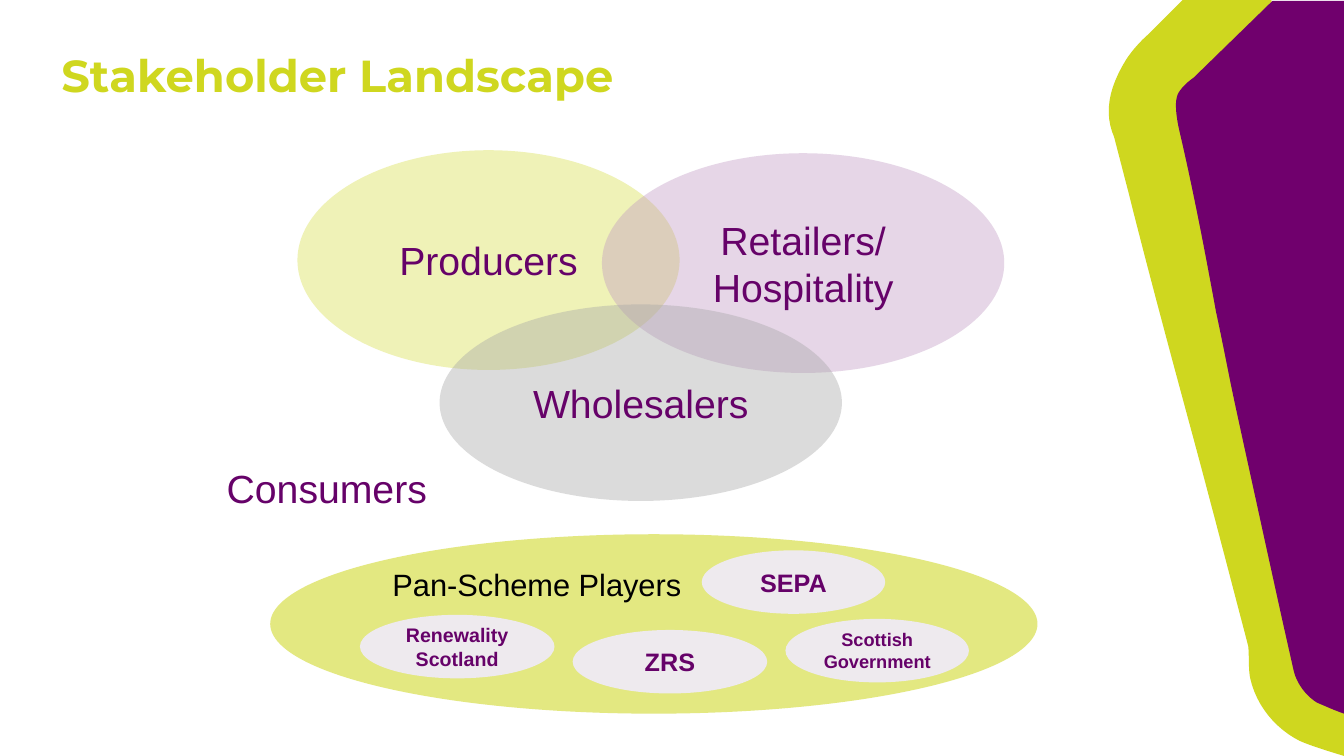
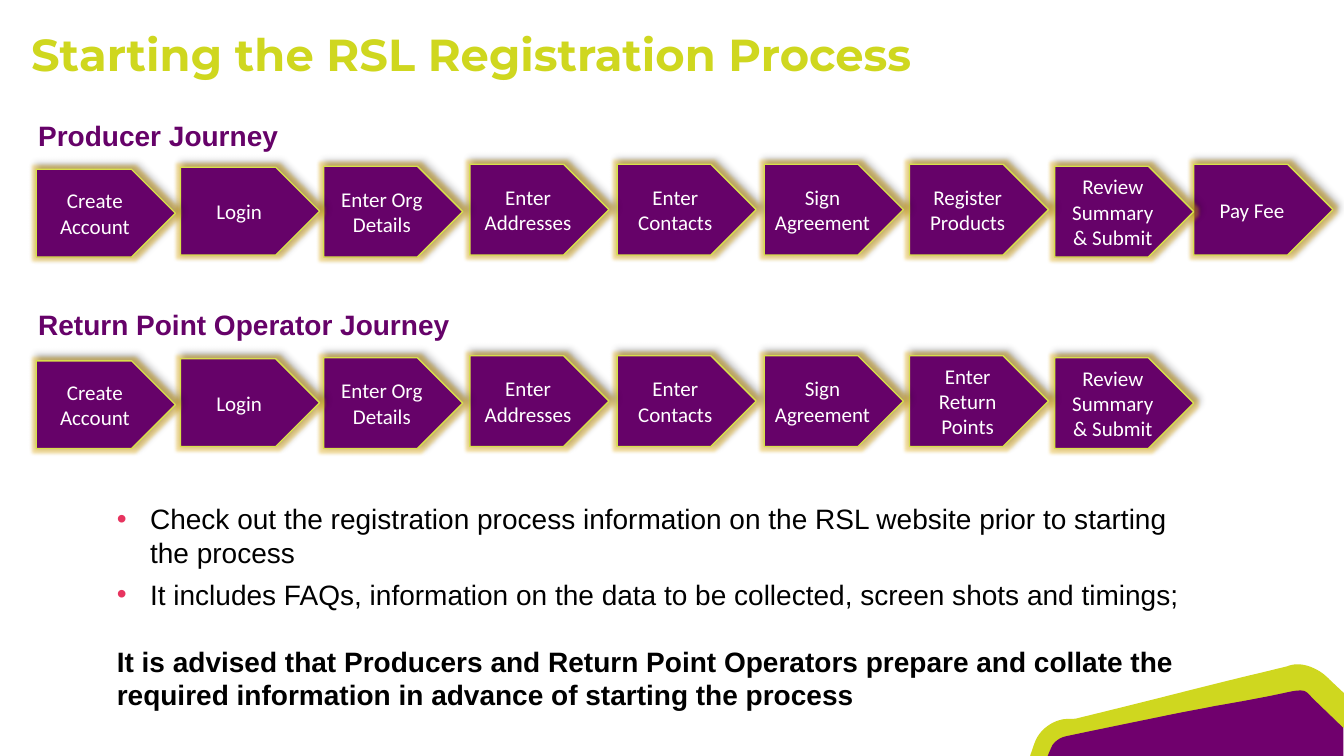
from dataclasses import dataclass
from typing import Callable, NamedTuple

from lxml.etree import SubElement
from pptx import Presentation
from pptx.dml.color import RGBColor
from pptx.enum.shapes import MSO_SHAPE
from pptx.enum.text import MSO_ANCHOR, PP_ALIGN
from pptx.oxml.ns import qn
from pptx.util import Inches, Pt

LIME, PURPLE, PLUM = "CFD71F", "70006D", "660269"
BLACK, WHITE, PALE, EDGE = "000000", "FFFFFF", "EEEAEE", "D8DF4B"
PINK, GOLD = "E7345F", "E8B010"
PAGE_WIDTH, PAGE_HEIGHT = 13.33, 7.5

# Corner art, laid out for the right side of a page. Each outline starts at
# a point; two further numbers make a line, six make a curve.
LIME_BAND = [
    (12.61, 0), (11.73, 0), (11.39, 0.34),
    (11.31, 0.41, 11.23, 0.5, 11.17, 0.59),
    (10.99, 0.88, 10.95, 1.13, 11.05, 1.36), (11.19, 1.9),
    (11.34, 2.5, 11.56, 3.33, 11.78, 4.14),
    (12, 4.95, 12.22, 5.8, 12.38, 6.41),
    (12.39, 6.5, 12.38, 6.64, 12.4, 6.73),
    (12.46, 7, 12.65, 7.23, 12.89, 7.35),
    (13, 7.4, 13.2, 7.46, 13.33, 7.5), (13.33, 7.08),
]
PURPLE_PANEL = [
    (12.62, 0.01), (11.84, 0.77),
    (11.77, 0.82, 11.72, 0.87, 11.69, 0.92),
    (11.64, 1, 11.67, 1.18, 11.7, 1.31),
    (11.82, 1.82, 11.94, 2.43, 12.06, 3.09),
    (12.13, 3.41, 12.19, 3.74, 12.26, 4.06),
    (12.43, 4.84, 12.59, 5.57, 12.72, 6.16), (12.83, 6.65),
    (12.86, 6.78, 12.95, 6.9, 13.06, 6.97),
    (13.13, 7, 13.24, 7.05, 13.33, 7.08), (13.33, 0.01),
]

Point = tuple[float, float]


class Box(NamedTuple):
    left: float
    top: float
    width: float
    height: float

    def lengths(self) -> list[int]:
        return [Inches(value) for value in self]


@dataclass
class Style:
    size: float
    color: str = PLUM
    name: str = "Arial"
    bold: bool = False


@dataclass
class Oval:
    text: str
    box: Box
    fill: str
    style: Style
    opacity: int = 100
    centred: bool = True


class Step(NamedTuple):
    text: str
    left: float
    drop: float
    height: float = 0.9


@dataclass
class Note:
    text: str
    style: Style
    bullet: bool = False
    before: float = 0
    after: float = 6


TITLE = Style(32, LIME, "Montserrat", True)
GROUP, HEADING = Style(28), Style(20, bold=True)
STEP_TEXT = Style(15, WHITE, "Calibri")

OVALS = [
    Oval("Producers", Box(2.95, 1.49, 3.79, 2.18), EDGE, GROUP, 40),
    Oval("Retailers/\vHospitality", Box(5.97, 1.52, 3.99, 2.18), "C199C3", GROUP, 40),
    Oval("Wholesalers", Box(4.36, 3.02, 3.99, 1.95), "A6A6A6", GROUP, 40),
    Oval("Pan-Scheme Players", Box(2.68, 5.3, 7.61, 1.78), "DDE362",
         Style(22, BLACK), 80, False),
    Oval("Renewality Scotland", Box(3.57, 6.1, 1.93, 0.63), PALE, Style(14, bold=True)),
    Oval("SEPA", Box(6.96, 5.46, 1.82, 0.63), PALE, Style(18, bold=True)),
    Oval("ZRS", Box(5.68, 6.25, 1.93, 0.63), PALE, Style(18, bold=True)),
    Oval("Scottish Government", Box(7.79, 6.14, 1.82, 0.63), PALE, Style(13, bold=True)),
]

PRODUCER_STEPS = [
    Step("Create Account", 0.36, 0.05, 0.87),
    Step("Login", 1.79, 0.03, 0.87),
    Step("Enter Org Details", 3.21, 0.02),
    Step("Enter Addresses", 4.66, 0),
    Step("Enter Contacts", 6.12, 0),
    Step("Sign Agreement", 7.58, 0),
    Step("Register Products", 9.02, 0),
    Step("Review Summary & Submit", 10.46, 0.02),
    Step("Pay Fee", 11.84, 0),
]
OPERATOR_STEPS = [
    step._replace(text="Enter Return\nPoints") if step.text == "Register Products" else step
    for step in PRODUCER_STEPS[:-1]
]

NOTES = [
    Note("Check out the registration process information on the RSL website prior "
         "to starting the process", Style(20, BLACK), True),
    Note("It includes FAQs, information on the data to be collected, screen shots "
         "and timings;", Style(20, BLACK), True),
    Note("It is advised that Producers and Return Point Operators prepare and collate "
         "the required information in advance of starting the process",
         Style(20, BLACK, bold=True), before=17.5, after=12),
]


# Colour and text helpers
def paint(target, color: str, opacity: int = 100) -> None:
    """Colour a fill, or a font's or line's fill, from a hex string."""
    target.solid()
    target.fore_color.rgb = RGBColor.from_string(color)
    if opacity < 100:
        hue = target._xPr.find(qn("a:solidFill"))[0]
        SubElement(hue, qn("a:alpha"), val=str(opacity * 1000))


def style_para(para, style: Style) -> None:
    values = {"name": style.name, "size": Pt(style.size), "bold": style.bold}
    for span in para.runs:
        for key, value in values.items():
            setattr(span.font, key, value)
        paint(span.font.fill, style.color)


def write(frame, text: str, style: Style, align=PP_ALIGN.LEFT,
          anchor=MSO_ANCHOR.TOP) -> None:
    for key, value in {"word_wrap": True, "vertical_anchor": anchor}.items():
        setattr(frame, key, value)
    for index, line in enumerate(text.split("\n")):
        para = frame.add_paragraph() if index else frame.paragraphs[0]
        para.text = line
        para.alignment = align
        style_para(para, style)


def add_label(page, text: str, box: Box, style: Style) -> None:
    write(page.shapes.add_textbox(*box.lengths()).text_frame, text, style)


# Corner art
def trace(outline: list[tuple], pieces: int = 12) -> list[Point]:
    """Turn lines and cubic curves into a chain of points."""
    points = [outline[0]]
    for part in outline[1:]:
        if len(part) == 2:
            points.append(part)
            continue
        knots = [points[-1], part[:2], part[2:4], part[4:]]
        for index in range(1, pieces + 1):
            t = index / pieces
            weights = ((1 - t) ** 3, 3 * t * (1 - t) ** 2, 3 * t * t * (1 - t), t ** 3)
            points.append(tuple(
                sum(weight * knot[axis] for weight, knot in zip(weights, knots))
                for axis in (0, 1)))
    return points


def side(point: Point) -> Point:
    return point


def bottom(point: Point) -> Point:
    """Turn the side art into the small art at the bottom right."""
    x, y = point
    return PAGE_WIDTH - 0.415 * y, PAGE_HEIGHT - 0.39 * (PAGE_WIDTH - x)


def add_corner(page, place: Callable[[Point], Point]) -> None:
    for outline, color in ((LIME_BAND, LIME), (PURPLE_PANEL, PURPLE)):
        points = [tuple(Inches(value) for value in place(point))
                  for point in trace(outline)]
        builder = page.shapes.build_freeform(*points[0], scale=1.0)
        builder.add_line_segments(points[1:], close=True)
        shape = builder.convert_to_shape()
        shape.shadow.inherit = False
        paint(shape.fill, color)
        shape.line.fill.background()


def add_page(deck, title: str, box: Box, place: Callable[[Point], Point]):
    page = deck.slides.add_slide(deck.slide_layouts[6])
    add_label(page, title, box, TITLE)
    add_corner(page, place)
    return page


# Ovals and journey steps
def add_oval(page, oval: Oval) -> None:
    shape = page.shapes.add_shape(MSO_SHAPE.OVAL, *oval.box.lengths())
    shape.shadow.inherit = False
    paint(shape.fill, oval.fill, oval.opacity)
    shape.line.fill.background()
    layout = (PP_ALIGN.CENTER, MSO_ANCHOR.MIDDLE) if oval.centred else ()
    write(shape.text_frame, oval.text, oval.style, *layout)


def add_effect(effects, kind: str, color: str, opacity: int, **values: int) -> None:
    effect = SubElement(effects, qn(f"a:{kind}"),
                        {key: str(value) for key, value in values.items()})
    hue = SubElement(effect, qn("a:srgbClr"), val=color)
    SubElement(hue, qn("a:alpha"), val=str(opacity * 1000))


def add_journey(page, heading: str, heading_top: float, steps: list[Step],
                steps_top: float) -> None:
    add_label(page, heading, Box(0.28, heading_top, 4.4, 0.44), HEADING)
    for step in reversed(steps):
        box = Box(step.left, steps_top + step.drop, 1.38, step.height)
        shape = page.shapes.add_shape(MSO_SHAPE.PENTAGON, *box.lengths())
        shape.shadow.inherit = False
        effects = shape._element.spPr.find(qn("a:effectLst"))
        add_effect(effects, "glow", GOLD, 40, rad=Pt(5))
        add_effect(effects, "outerShdw", BLACK, 40, blurRad=Pt(4), dist=Pt(3),
                   dir=315 * 60000)
        paint(shape.fill, PLUM)
        paint(shape.line.fill, EDGE)
        shape.line.width = Pt(1)
        write(shape.text_frame, step.text, STEP_TEXT, PP_ALIGN.CENTER, MSO_ANCHOR.MIDDLE)


# Advice under the journeys
def add_bullet(para) -> None:
    props = para._p.get_or_add_pPr()
    props.set("marL", str(Inches(0.33)))
    props.set("indent", str(Inches(-0.33)))
    SubElement(SubElement(props, qn("a:buClr")), qn("a:srgbClr"), val=PINK)
    SubElement(props, qn("a:buFont"), typeface="Arial")
    SubElement(props, qn("a:buChar"), char="•")


def add_notes(page, notes: list[Note], box: Box) -> None:
    frame = page.shapes.add_textbox(*box.lengths()).text_frame
    frame.word_wrap = True
    for index, note in enumerate(notes):
        para = frame.add_paragraph() if index else frame.paragraphs[0]
        para.text = note.text
        if note.bullet:
            add_bullet(para)
        for key, value in {"space_before": note.before, "space_after": note.after}.items():
            setattr(para, key, Pt(value))
        style_para(para, note.style)


def main() -> None:
    deck = Presentation()
    deck.slide_width, deck.slide_height = Inches(PAGE_WIDTH), Inches(PAGE_HEIGHT)

    # Stakeholders
    page = add_page(deck, "Stakeholder Landscape", Box(0.51, 0.42, 6.56, 0.64), side)
    for oval in OVALS:
        add_oval(page, oval)
    add_label(page, "Consumers", Box(2.15, 4.56, 2.3, 0.57), GROUP)

    # Registration journeys
    page = add_page(deck, "Starting the RSL Registration Process",
                    Box(0.21, 0.22, 9.7, 0.64), bottom)
    add_journey(page, "Producer Journey", 1.13, PRODUCER_STEPS, 1.63)
    add_journey(page, "Return Point Operator Journey", 3, OPERATOR_STEPS, 3.53)
    add_notes(page, NOTES, Box(1.06, 4.93, 11.01, 2.2))

    deck.save("out.pptx")


if __name__ == "__main__":
    main()
